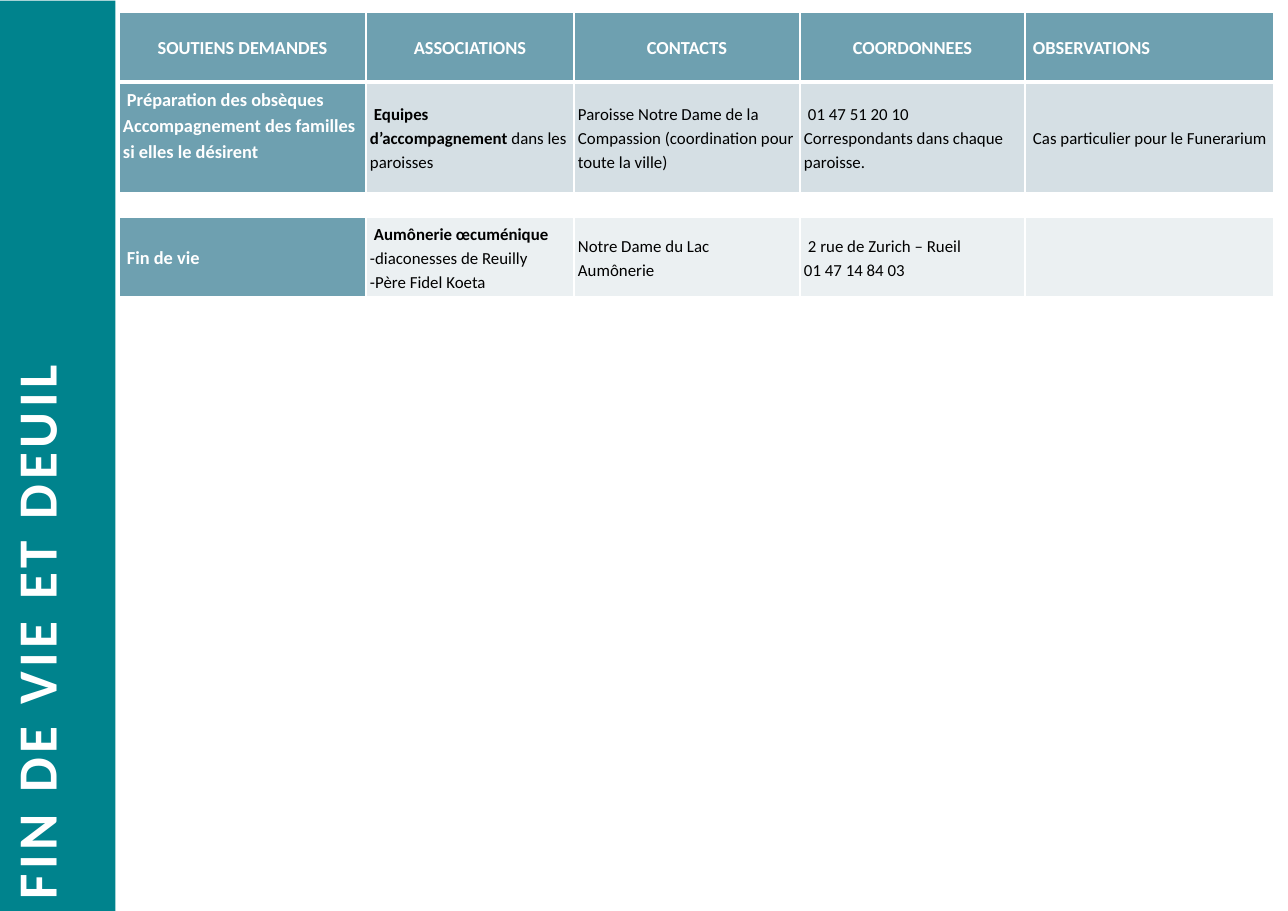
from lxml import etree
from pptx import Presentation
from pptx import util as u
from pptx.dml.color import RGBColor
from pptx.enum import shapes, text
from pptx.oxml.ns import qn

PX = 914400 / 110.2
FONT = "Calibri"
COLORS = {
    "sidebar": "00838D",
    "header": "6EA0B0",
    "band_dark": "D5DFE4",
    "band_light": "EBF0F2",
    "white": "FFFFFF",
    "black": "000000",
}

COLUMN_WIDTHS = [247, 208, 226, 225, 249]
ROW_HEIGHTS = [70, 110, 3, 22, 79]
GAP_ROWS = [2, 3]
HEADERS = ["SOUTIENS DEMANDES", "ASSOCIATIONS", "CONTACTS", "COORDONNEES", "OBSERVATIONS"]
CONTACTS = HEADERS.index("CONTACTS")

# Row index: (band colour, cells as lists of lines); text before "|" is bold
BODY = {
    1: ("band_dark", [
        ["Préparation des obsèques", "Accompagnement des familles si elles le désirent"],
        ["Equipes d’accompagnement |dans les paroisses"],
        ["Paroisse Notre Dame de la Compassion (coordination pour toute la ville)"],
        ["01 47 51 20 10", "Correspondants dans chaque paroisse."],
        ["Cas particulier pour le Funerarium"],
    ]),
    4: ("band_light", [
        ["Fin de vie"],
        ["Aumônerie œcuménique|", "-diaconesses de Reuilly", "-Père Fidel Koeta"],
        ["Notre Dame du Lac", "Aumônerie"],
        ["2 rue de Zurich – Rueil", "01 47 14 84 03"],
        [],
    ]),
}


def px(length):
    return u.Emu(round(length * PX))


def color(name):
    return RGBColor.from_string(COLORS[name])


def set_font(font, size, color_name, bold):
    font.name = FONT
    font.size = u.Pt(size)
    font.bold = bold
    font.color.rgb = color(color_name)


def set_margins(target, left, top, right, bottom):
    target.margin_left, target.margin_top = px(left), px(top)
    target.margin_right, target.margin_bottom = px(right), px(bottom)


def set_borders(cell, top=1, bottom=1):
    properties = cell._tc.get_or_add_tcPr()
    for side, width in (("L", 1), ("R", 1), ("T", top), ("B", bottom)):
        line = etree.SubElement(properties, qn(f"a:ln{side}"), w=str(u.Pt(width)))
        fill = etree.SubElement(line, qn("a:solidFill"))
        etree.SubElement(fill, qn("a:srgbClr"), val=COLORS["white"])


def fill_cell(cell, color_name):
    cell.fill.solid()
    cell.fill.fore_color.rgb = color(color_name)


def add_sidebar(page, title):
    box = page.shapes.add_shape(
        shapes.MSO_SHAPE.RECTANGLE, px(-400), px(396), px(911), px(120))
    box.rotation = 270
    box.shadow.inherit = False
    box.fill.solid()
    box.fill.fore_color.rgb = color("sidebar")
    box.line.fill.background()
    frame = box.text_frame
    frame.word_wrap = True
    frame.vertical_anchor = text.MSO_ANCHOR.TOP
    set_margins(frame, 12, 6, 12, 6)
    para = frame.paragraphs[0]
    para.alignment = text.PP_ALIGN.LEFT
    set_font(para.font, 36, "white", True)
    span = para.add_run()
    span.text = title
    span.font._element.set("spc", "300")


def write_line(para, line, size, color_name, bold):
    para.line_spacing = 1.15
    set_font(para.font, size, color_name, bold)
    lead, mark, rest = line.partition("|")
    para.add_run().text = lead
    if mark:
        para.runs[0].font.bold = True
        if rest:
            para.add_run().text = rest


def write_header(cell, label, centred):
    set_borders(cell, bottom=3)
    fill_cell(cell, "header")
    set_margins(cell, 8, 0, 8, 0)
    cell.vertical_anchor = text.MSO_ANCHOR.MIDDLE
    para = cell.text_frame.paragraphs[0]
    para.alignment = text.PP_ALIGN.CENTER if centred else text.PP_ALIGN.LEFT
    write_line(para, label, 12, "white", True)


def write_body(cell, lines, band, is_label, indented):
    fill_cell(cell, "header" if is_label else band)
    cell.vertical_anchor = text.MSO_ANCHOR.MIDDLE
    set_margins(cell, 4, 4, 4, 4)
    style = (12, "white", True) if is_label else (11, "black", False)
    frame = cell.text_frame
    for index, line in enumerate(lines):
        para = frame.add_paragraph() if index else frame.paragraphs[0]
        write_line(para, line, *style)
        if indented and index == 0:
            para._p.get_or_add_pPr().set("indent", str(px(4)))


def clear_gap(cell):
    cell.fill.background()
    set_margins(cell, 0, 0, 0, 0)
    etree.SubElement(cell.text_frame.paragraphs[0]._p, qn("a:endParaRPr"), sz="100")


def add_support_table(page):
    frame = page.shapes.add_table(
        len(ROW_HEIGHTS), len(COLUMN_WIDTHS), px(119), px(12),
        px(sum(COLUMN_WIDTHS)), px(sum(ROW_HEIGHTS)))
    table = frame.table
    table.first_row = table.horz_banding = False
    for column, width in zip(table.columns, COLUMN_WIDTHS):
        column.width = px(width)
    for row, height in zip(table.rows, ROW_HEIGHTS):
        row.height = px(height)

    # Header row
    for col, label in enumerate(HEADERS):
        write_header(table.cell(0, col), label, centred=label != "OBSERVATIONS")

    # Body rows
    for row, (band, cells) in BODY.items():
        for col, lines in enumerate(cells):
            cell = table.cell(row, col)
            set_borders(cell, top=3 if row == 1 else 1)
            write_body(cell, lines, band, col == 0, col != CONTACTS)

    # Room below the first label, and the wrap after "Equipes"
    table.cell(1, 0).margin_bottom = px(29)
    table.cell(1, 1).margin_right = px(6)

    # White gap between the two body rows
    for row in GAP_ROWS:
        for col in range(len(COLUMN_WIDTHS)):
            cell = table.cell(row, col)
            set_borders(cell)
            clear_gap(cell)


def main():
    deck = Presentation()
    deck.slide_width, deck.slide_height = px(1288), px(911)
    page = deck.slides.add_slide(deck.slide_layouts[6])
    add_sidebar(page, "FIN DE VIE ET DEUIL")
    add_support_table(page)
    deck.save("out.pptx")


if __name__ == "__main__":
    main()
